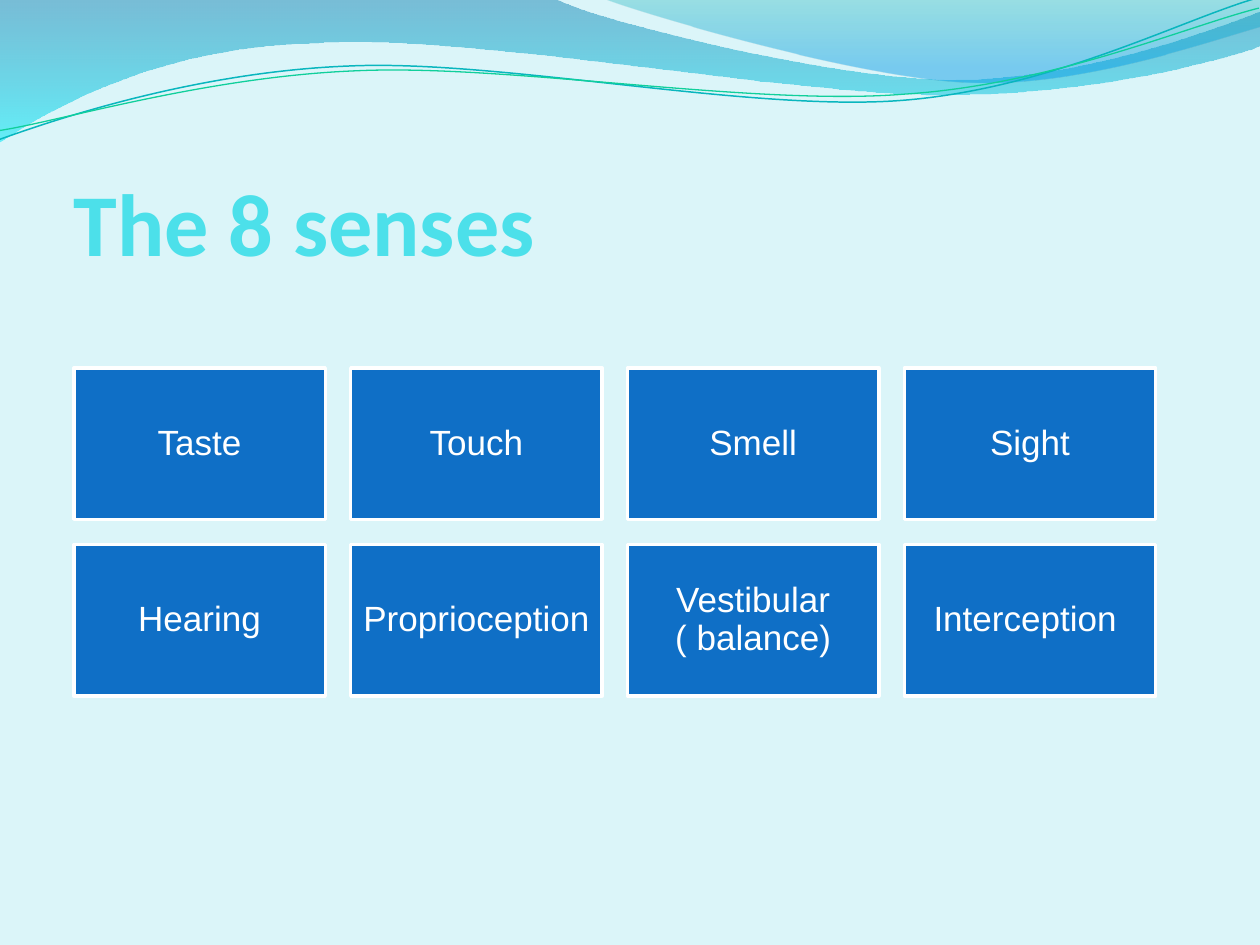
from dataclasses import dataclass
from typing import Optional

from lxml.etree import SubElement
from pptx import Presentation
from pptx.dml.color import RGBColor
from pptx.enum.shapes import MSO_SHAPE as Shape
from pptx.enum.text import MSO_ANCHOR as Anchor, MSO_AUTO_SIZE as AutoSize, PP_ALIGN as Align
from pptx.oxml.ns import qn
from pptx.util import Cm, Pt

BACKGROUND = RGBColor(0xDB, 0xF5, 0xF9)
TITLE_CYAN = RGBColor(0x4C, 0xE0, 0xEA)
TILE_BLUE = RGBColor(0x0F, 0x6F, 0xC6)
WHITE = RGBColor(0xFF, 0xFF, 0xFF)
DEEP_BLUE = RGBColor(0x00, 0x79, 0xAD)
BRIGHT_CYAN = RGBColor(0x00, 0xE9, 0xF7)
TEAL = RGBColor(0x00, 0xAB, 0xB4)
SKY_BLUE = RGBColor(0x00, 0x99, 0xE4)
LINE_TEAL = RGBColor(0x09, 0xB6, 0xBE)
LINE_GREEN = RGBColor(0x10, 0xCF, 0x9B)

WAVE_UNIT = Cm(2.54)  # wave points count tenths of the slide width
LINE_TILT = -2.7  # degrees
Point = tuple[float, float]


@dataclass
class Stop:
    position: float
    color: RGBColor
    opacity: int  # percent


@dataclass
class Wave:
    start: Point
    segments: list[tuple[Point, ...]]  # one point: straight line, three: Bezier curve
    stops: tuple[Stop, ...] = ()
    line_color: Optional[RGBColor] = None
    line_width: float = 0


WAVES = [
    Wave((0, 0), [
        ((4.4, -0.01),),
        ((4.76, 0.17), (6.64, 0.63), (7.58, 0.63)),
        ((8.53, 0.63), (9.58, 0.26), (10, 0.09)),
        ((10.01, 0.36),),
        ((9.83, 0.44), (8.7, 0.76), (7.46, 0.75)),
        ((6.22, 0.75), (3.82, 0.28), (2.57, 0.34)),
        ((1.29, 0.36), (0.46, 0.83), (-0.01, 1.13)),
    ], stops=(Stop(0, DEEP_BLUE, 45), Stop(1, BRIGHT_CYAN, 55))),
    Wave((4.79, -0.01), [
        ((5.09, 0.11), (6.82, 0.62), (7.69, 0.65)),
        ((8.56, 0.69), (9.61, 0.32), (10, 0.21)),
        ((10, 0),),
    ], stops=(Stop(0, TEAL, 30), Stop(0.8, SKY_BLUE, 45))),
    Wave((-0.02, 0.87), [
        ((0.47, 0.72), (1.58, 0.41), (2.77, 0.42)),
        ((3.96, 0.42), (5.91, 0.93), (7.12, 0.9)),
        ((8.32, 0.87), (9.4, 0.36), (10, 0.22)),
    ], line_color=LINE_TEAL, line_width=0.85),
    Wave((-0.02, 0.8), [
        ((0.46, 0.75), (1.64, 0.45), (2.83, 0.46)),
        ((4.03, 0.46), (5.96, 0.89), (7.16, 0.85)),
        ((8.35, 0.83), (9.42, 0.42), (10.01, 0.3)),
    ], line_color=LINE_GREEN, line_width=0.75),
]

SENSES = ["Taste", "Touch", "Smell", "Sight",
          "Hearing", "Proprioception", "Vestibular ( balance)", "Interception "]
COLUMNS = 4
GRID_LEFT, GRID_TOP = 1.49, 7.42
TILE_WIDTH, TILE_HEIGHT, TILE_GAP = 5.07, 3.05, 0.51

TITLE_FONT = {"name": "Calibri", "size": Pt(50.4), "bold": True}
TILE_FONT = {"name": "Arial", "size": Pt(20)}


def set_attributes(target, values: dict) -> None:
    for name, value in values.items():
        setattr(target, name, value)


def write(box, text: str, font: dict, color: RGBColor,
          para_format: dict, frame_format: dict) -> None:
    frame = box.text_frame
    set_attributes(frame, frame_format)
    para = frame.paragraphs[0]
    set_attributes(para, para_format)
    span = para.add_run()
    span.text = text
    set_attributes(span.font, font)
    span.font.color.rgb = color


def to_emu(point: Point) -> tuple[int, int]:
    return round(point[0] * WAVE_UNIT), round(point[1] * WAVE_UNIT)


def bend_segments(shape, segments: list[tuple[Point, ...]]) -> None:
    """Turn the straight segments that have control points into Bezier curves."""
    straight = list(shape.element.spPr.iter(qn("a:lnTo")))
    for element, segment in zip(straight, segments):
        if len(segment) == 1:
            continue
        element.addprevious(curve := SubElement(element.getparent(), qn("a:cubicBezTo")))
        for x, y in map(to_emu, segment):
            corner = SubElement(curve, qn("a:pt"))
            corner.set("x", str(x - shape.left))
            corner.set("y", str(y - shape.top))
        element.getparent().remove(element)


def draw_wave(page, wave: Wave) -> None:
    builder = page.shapes.build_freeform(*to_emu(wave.start))
    builder.add_line_segments([to_emu(segment[-1]) for segment in wave.segments],
                              close=bool(wave.stops))
    shape = builder.convert_to_shape()
    bend_segments(shape, wave.segments)
    shape.shadow.inherit = False
    if not wave.stops:
        shape.rotation = LINE_TILT
        shape.fill.background()
        shape.line.color.rgb = wave.line_color
        shape.line.width = Pt(wave.line_width)
        return
    shape.line.fill.background()
    shape.fill.gradient()
    shape.fill.gradient_angle = 270  # top to bottom
    for target, stop in zip(shape.fill.gradient_stops, wave.stops):
        target.position = stop.position
        target.color.rgb = stop.color
    colors = list(shape.element.spPr.iter(qn("a:srgbClr")))
    for color, stop in zip(colors, wave.stops):
        SubElement(color, qn("a:alpha")).set("val", str(stop.opacity * 1000))


def draw_tile(page, index: int, sense: str) -> None:
    row, column = divmod(index, COLUMNS)
    tile = page.shapes.add_shape(
        Shape.RECTANGLE,
        Cm(GRID_LEFT + column * (TILE_WIDTH + TILE_GAP)),
        Cm(GRID_TOP + row * (TILE_HEIGHT + TILE_GAP)),
        Cm(TILE_WIDTH), Cm(TILE_HEIGHT))
    tile.shadow.inherit = False
    tile.fill.solid()
    tile.fill.fore_color.rgb = TILE_BLUE
    tile.line.color.rgb = WHITE
    tile.line.width = Pt(2)
    margins = {f"margin_{side}": Cm(0.2) for side in ("left", "top", "right", "bottom")}
    write(tile, sense, TILE_FONT, WHITE, {"alignment": Align.CENTER, "line_spacing": 0.9},
          {"word_wrap": True, "vertical_anchor": Anchor.MIDDLE, **margins})


def main() -> None:
    deck = Presentation()
    set_attributes(deck, {"slide_width": Cm(25.4), "slide_height": Cm(19.05)})
    page = deck.slides.add_slide(deck.slide_layouts[0])
    page.background.fill.solid()
    page.background.fill.fore_color.rgb = BACKGROUND
    subtitle = page.placeholders[1].element
    subtitle.getparent().remove(subtitle)

    # Waves along the top edge
    for wave in WAVES:
        draw_wave(page, wave)

    # Title
    title = page.shapes.title
    set_attributes(title, {"left": Cm(1.48), "top": Cm(3.8),
                           "width": Cm(21.82), "height": Cm(1.73)})
    write(title, "The 8 senses", TITLE_FONT, TITLE_CYAN, {"alignment": Align.LEFT},
          {"auto_size": AutoSize.NONE, "vertical_anchor": Anchor.BOTTOM, "margin_left": 0,
           "margin_top": 0, "margin_right": Cm(0.05), "margin_bottom": 0})

    # Grid of senses
    for index, sense in enumerate(SENSES):
        draw_tile(page, index, sense)

    deck.save("out.pptx")


if __name__ == "__main__":
    main()
